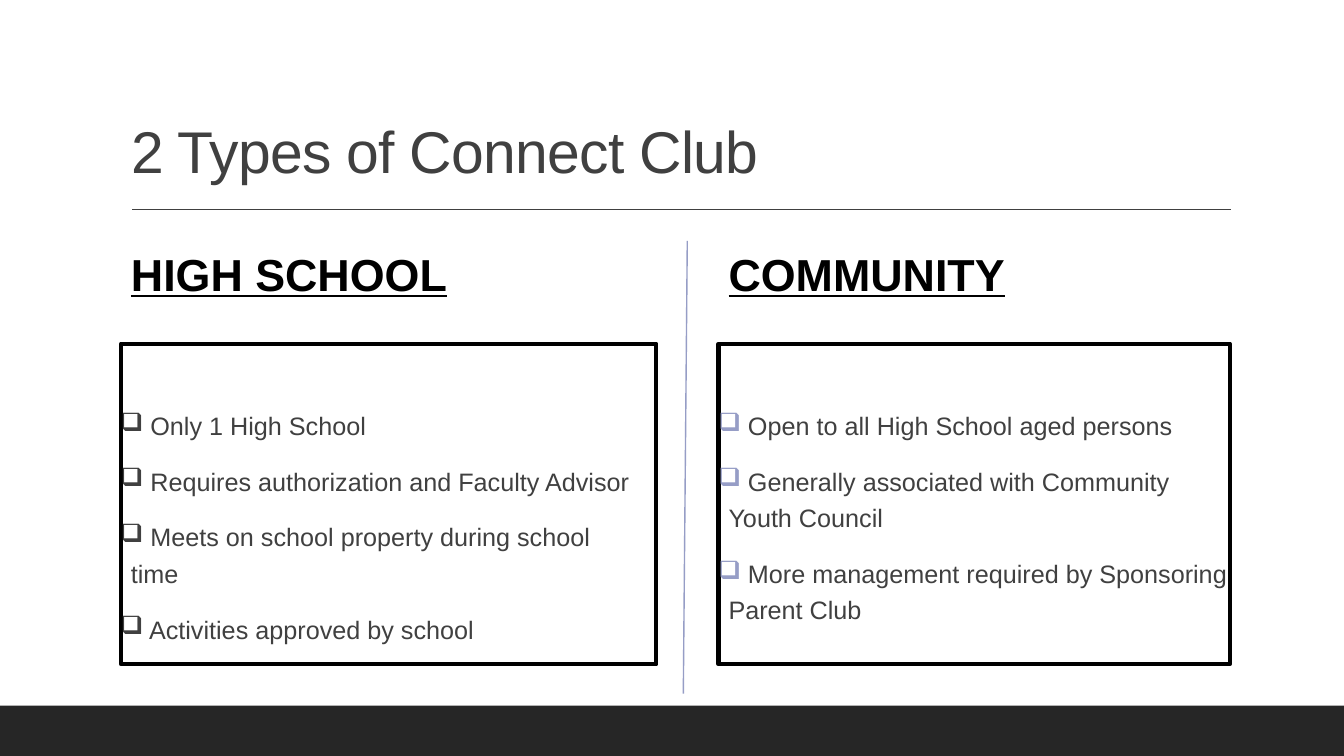
from dataclasses import dataclass

from lxml import etree
from pptx import Presentation
from pptx.dml.color import RGBColor
from pptx.enum import shapes, text
from pptx.oxml import ns
from pptx.util import Cm, Pt

TITLE = "2 Types of Connect Club"
CLUBS = [
    {
        "heading": "HIGH SCHOOL",
        "left": 3.05,
        "box_width": 13.49,
        "bullet": "404040",
        "points": [
            "Only 1 High School",
            "Requires authorization and Faculty Advisor",
            "Meets on school property during school\vtime",
            "Activities approved by school",
        ],
    },
    {
        "heading": "COMMUNITY",
        "left": 18.11,
        "box_width": 12.88,
        "bullet": "969DC6",
        "points": [
            "Open to all High School aged persons",
            "Generally associated with Community Youth Council",
            "More management required by Sponsoring Parent Club",
        ],
    },
]


@dataclass(frozen=True)
class Theme:
    font: str = "Arial"
    body: str = "404040"
    strong: str = "000000"
    accent: str = "969DC6"
    bar: str = "262626"
    title_size: int = 42
    heading_size: int = 32
    point_size: int = 18


THEME = Theme()
PAGE_WIDTH, PAGE_HEIGHT = 33.87, 19.05
BAR_TOP = 17.78
HEADING_TOP, HEADING_WIDTH, HEADING_HEIGHT = 5.72, 12.88, 2.06
BOX_TOP, BOX_HEIGHT = 8.66, 8.08
INDENT = 0.25


def color(code):
    return RGBColor.from_string(code)


def style_runs(para, size, code, bold=False, underline=False):
    for span in para.runs:
        span.font.name = THEME.font
        span.font.size = Pt(size)
        span.font.color.rgb = color(code)
        span.font.bold = bold
        span.font.underline = underline


def space_paragraph(para, before=12):
    para.alignment = text.PP_ALIGN.LEFT
    para.line_spacing = 1.2
    para.space_before = Pt(before)
    para.space_after = Pt(2)


def add_bullet(para, code):
    properties = para._p.get_or_add_pPr()
    properties.set("marL", str(Cm(INDENT)))
    properties.set("indent", str(-Cm(INDENT)))
    tint = etree.SubElement(properties, ns.qn("a:buClr"))
    etree.SubElement(tint, ns.qn("a:srgbClr"), val=code)
    etree.SubElement(properties, ns.qn("a:buChar"), char="❑")


def add_line(page, start, end, code):
    line = page.shapes.add_connector(
        shapes.MSO_CONNECTOR.STRAIGHT, *map(Cm, start + end)
    )
    line.line.color.rgb = color(code)
    line.line.width = Pt(1)
    etree.SubElement(line._element.spPr, ns.qn("a:effectLst"))


def add_rectangle(page, left, top, width, height):
    box = page.shapes.add_shape(
        shapes.MSO_SHAPE.RECTANGLE, *map(Cm, (left, top, width, height))
    )
    box.shadow.inherit = False
    return box


def add_title(page):
    title = page.shapes.title
    title.left, title.top = Cm(3.05), Cm(0.79)
    title.width, title.height = Cm(27.94), Cm(4.04)
    frame = title.text_frame
    frame.text = TITLE
    frame.auto_size = text.MSO_AUTO_SIZE.NONE
    frame.vertical_anchor = text.MSO_ANCHOR.BOTTOM
    para = frame.paragraphs[0]
    para.alignment = text.PP_ALIGN.LEFT
    para.line_spacing = 0.9
    style_runs(para, THEME.title_size, THEME.body)
    para.runs[0]._r.get_or_add_rPr().set("spc", "-50")


def add_heading(page, club):
    area = (club["left"], HEADING_TOP, HEADING_WIDTH, HEADING_HEIGHT)
    frame = page.shapes.add_textbox(*map(Cm, area)).text_frame
    frame.word_wrap = True
    frame.vertical_anchor = text.MSO_ANCHOR.MIDDLE
    frame.text = club["heading"]
    para = frame.paragraphs[0]
    space_paragraph(para)
    style_runs(para, THEME.heading_size, THEME.strong, bold=True, underline=True)


def add_points(page, club):
    box = add_rectangle(page, club["left"], BOX_TOP, club["box_width"], BOX_HEIGHT)
    box.fill.background()
    box.line.color.rgb = color(THEME.strong)
    box.line.width = Pt(3)
    frame = box.text_frame
    frame.word_wrap = True
    frame.vertical_anchor = text.MSO_ANCHOR.TOP
    frame.margin_left = frame.margin_right = 0
    frame.margin_top, frame.margin_bottom = Cm(1.52), Cm(0.13)
    for index, point in enumerate(club["points"]):
        para = frame.paragraphs[0] if index == 0 else frame.add_paragraph()
        para.text = f" {point}"
        space_paragraph(para, before=12 if index else 0)
        add_bullet(para, club["bullet"])
        style_runs(para, THEME.point_size, THEME.body)


def main():
    deck = Presentation()
    deck.slide_width, deck.slide_height = Cm(PAGE_WIDTH), Cm(PAGE_HEIGHT)
    page = deck.slides.add_slide(deck.slide_layouts[5])
    bar = add_rectangle(page, 0, BAR_TOP, PAGE_WIDTH, PAGE_HEIGHT - BAR_TOP)
    bar.fill.solid()
    bar.fill.fore_color.rgb = color(THEME.bar)
    bar.line.fill.background()
    add_line(page, (3.33, 5.28), (31.01, 5.28), THEME.body)
    add_title(page)
    for club in CLUBS:
        add_heading(page, club)
        add_points(page, club)
    add_line(page, (17.32, 6.07), (17.22, 17.48), THEME.accent)
    deck.save("out.pptx")


if __name__ == "__main__":
    main()
